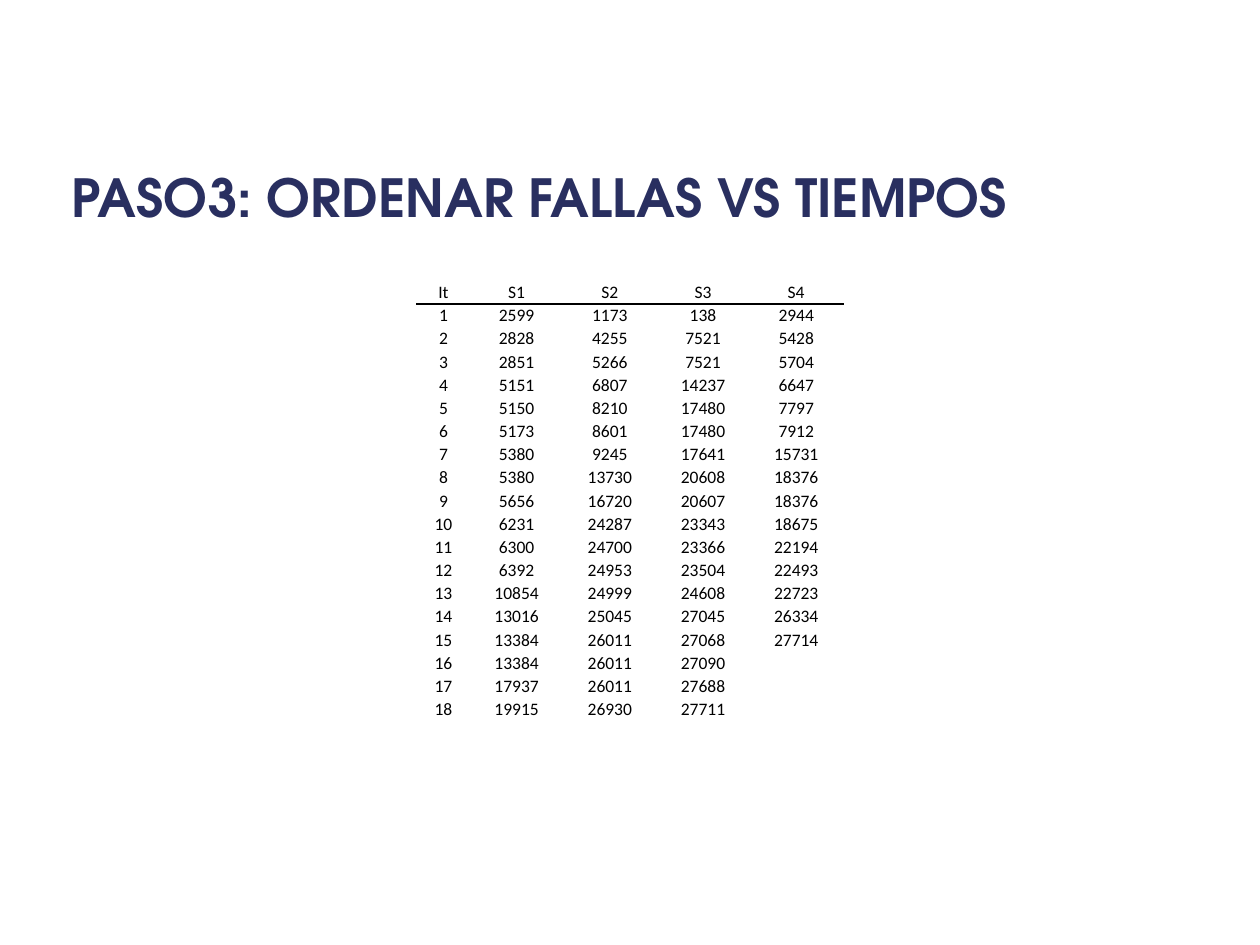
import lxml.etree
import pptx
import pptx.dml.color
import pptx.enum.text
import pptx.oxml.ns
import pptx.util

Inches = pptx.util.Inches
Pt = pptx.util.Pt
MIDDLE = pptx.enum.text.MSO_ANCHOR.MIDDLE
CENTER = pptx.enum.text.PP_ALIGN.CENTER

COLORS = {"title": "292F60", "text": "000000", "rule": "000000", "grid": "FFFFFF"}
TITLE_FONT = {"name": "TeX Gyre Adventor", "size": Pt(30), "bold": True}
CELL_FONT = {"name": "Calibri", "size": Pt(10), "bold": False}
CELL_FORMAT = {
    "margin_left": 0, "margin_right": 0, "margin_top": 0, "margin_bottom": 0,
    "vertical_anchor": MIDDLE,
}
COLUMN_WIDTHS = [0.42, 0.74, 0.74, 0.74, 0.74]
TABLE_HEIGHT = 3.5

FAILURE_TIMES = {
    "S1": [2599, 2828, 2851, 5151, 5150, 5173, 5380, 5380, 5656,
           6231, 6300, 6392, 10854, 13016, 13384, 13384, 17937, 19915],
    "S2": [1173, 4255, 5266, 6807, 8210, 8601, 9245, 13730, 16720,
           24287, 24700, 24953, 24999, 25045, 26011, 26011, 26011, 26930],
    "S3": [138, 7521, 7521, 14237, 17480, 17480, 17641, 20608, 20607,
           23343, 23366, 23504, 24608, 27045, 27068, 27090, 27688, 27711],
    "S4": [2944, 5428, 5704, 6647, 7797, 7912, 15731, 18376, 18376,
           18675, 22194, 22493, 22723, 26334, 27714, "", "", ""],
}


def set_attributes(target, values):
    for name, value in values.items():
        setattr(target, name, value)


def add_span(para, text, font, color):
    span = para.add_run()
    span.text = text
    set_attributes(span.font, font)
    span.font.color.rgb = pptx.dml.color.RGBColor.from_string(COLORS[color])


def add_title(page, text):
    box = page.shapes.add_textbox(Inches(0.47), Inches(1.2), Inches(8.03), Inches(0.79))
    frame = box.text_frame
    set_attributes(frame, {"word_wrap": True, "vertical_anchor": MIDDLE})
    para = frame.paragraphs[0]
    para.line_spacing = 0.9
    add_span(para, text, TITLE_FONT, "title")


def add_child(parent, tag, **attributes):
    return lxml.etree.SubElement(parent, pptx.oxml.ns.qn(tag), attributes)


def set_borders(cell, row):
    """Rule the edge between the header and the first data row."""
    sides = {
        "L": "grid",
        "R": "grid",
        "T": "rule" if row == 1 else "grid",
        "B": "rule" if row == 0 else "grid",
    }
    properties = cell._tc.get_or_add_tcPr()
    for side, color in sides.items():
        line = add_child(properties, f"a:ln{side}", w=str(Pt(1)))
        fill = add_child(line, "a:solidFill")
        add_child(fill, "a:srgbClr", val=COLORS[color])


def fill_cell(cell, row, text):
    set_attributes(cell, CELL_FORMAT)
    set_borders(cell, row)
    cell.fill.background()
    para = cell.text_frame.paragraphs[0]
    para.alignment = CENTER
    if text:
        add_span(para, text, CELL_FONT, "text")
    else:
        # Keeps an empty cell from stretching its row
        add_child(para._p, "a:endParaRPr", sz="1000")


def add_times_table(page):
    items = range(1, len(FAILURE_TIMES["S1"]) + 1)
    rows = [["It", *FAILURE_TIMES], *zip(items, *FAILURE_TIMES.values())]
    frame = page.shapes.add_table(
        len(rows), len(COLUMN_WIDTHS), Inches(3.31), Inches(2.23),
        Inches(sum(COLUMN_WIDTHS)), Inches(TABLE_HEIGHT))
    table = frame.table
    set_attributes(table, {"first_row": False, "horz_banding": False})
    for column, width in zip(table.columns, COLUMN_WIDTHS):
        column.width = Inches(width)
    for row, values in enumerate(rows):
        table.rows[row].height = Inches(TABLE_HEIGHT / len(rows))
        for column, value in enumerate(values):
            fill_cell(table.cell(row, column), row, str(value))


def main():
    deck = pptx.Presentation()
    set_attributes(deck, {"slide_width": Inches(10), "slide_height": Inches(7.5)})
    page = deck.slides.add_slide(deck.slide_layouts[6])
    add_title(page, "PASO3: ORDENAR FALLAS VS TIEMPOS")
    add_times_table(page)
    deck.save("out.pptx")


if __name__ == "__main__":
    main()
